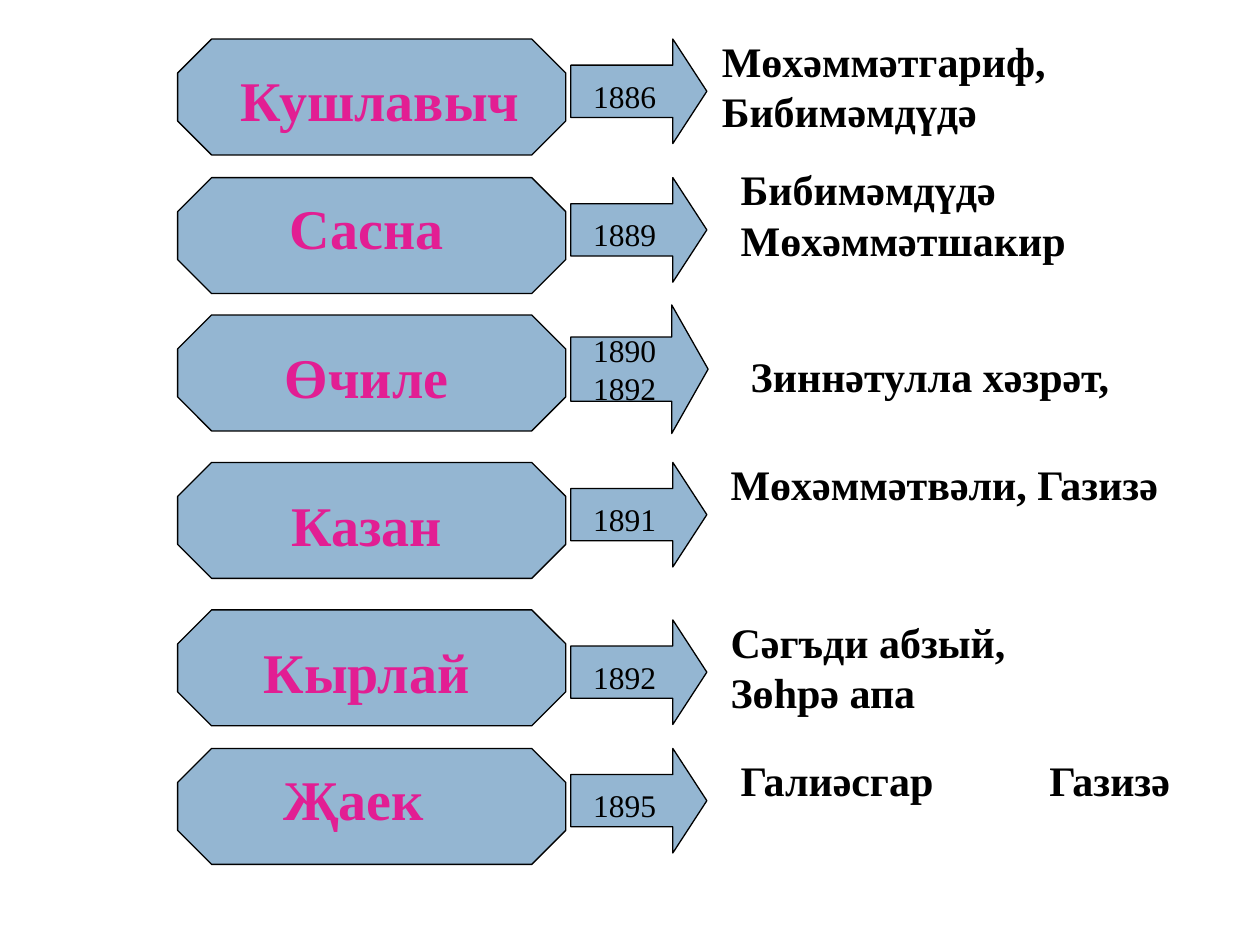
from dataclasses import dataclass

from lxml import etree
from pptx import Presentation
from pptx.dml.color import RGBColor
from pptx.enum import shapes, text
from pptx.oxml import ns
from pptx.util import Inches, Pt


@dataclass(frozen=True)
class Theme:
    font: str = "Times New Roman"
    fill: RGBColor = RGBColor(0x94, 0xB6, 0xD2)
    ink: RGBColor = RGBColor(0, 0, 0)
    accent: RGBColor = RGBColor(0xE2, 0x1E, 0x93)
    place_size: int = 32
    people_size: int = 24
    year_size: int = 18
    line_width: float = 0.75


theme = Theme()


def add_outline(parent, kind, box, adjustments):
    sp = parent.add_shape(kind, *map(Inches, box))
    for i, value in enumerate(adjustments):
        sp.adjustments[i] = value
    sp.shadow.inherit = False
    sp.fill.solid()
    sp.fill.fore_color.rgb = theme.fill
    sp.line.color.rgb = theme.ink
    sp.line.width = Pt(theme.line_width)


def add_label(parent, words, box, size, color=theme.ink, bold=True,
              align=text.PP_ALIGN.LEFT, tab=None):
    """Add a text box; tab is an optional tab stop in inches."""
    tf = parent.add_textbox(*map(Inches, box)).text_frame
    tf.word_wrap = True
    p = tf.paragraphs[0]
    p.text = words
    p.alignment = align
    if tab:
        tabs = etree.SubElement(p._p.get_or_add_pPr(), ns.qn("a:tabLst"))
        etree.SubElement(tabs, ns.qn("a:tab"), pos=str(Inches(tab)), algn="l")
    p.font.size = Pt(size)
    for r in p.runs:
        r.font.name = theme.font
        r.font.size = Pt(size)
        r.font.bold = bold
        r.font.color.rgb = color


prs = Presentation()
prs.slide_width, prs.slide_height = Inches(10), Inches(7.5)
s = prs.slides.add_slide(prs.slide_layouts[6])

# place, octagon top, label (left, top, width)
places = [
    ("Кушлавыч", 0.31, (1.64, 0.47, 2.75)),
    ("Сасна", 1.41, (1.66, 1.49, 2.5)),
    ("Өчиле", 2.5, (1.66, 2.67, 2.5)),
    ("Казан", 3.67, (1.66, 3.84, 2.5)),
    ("Кырлай", 4.84, (1.66, 5.01, 2.5)),
    ("Җаек", 5.94, (1.56, 6.02, 2.5)),
]
for place, top, label in places:
    group = s.shapes.add_group_shape().shapes
    add_outline(group, shapes.MSO_SHAPE.OCTAGON, (1.41, top, 3.08, 0.92), [0.293])
    add_label(group, place, (*label, 0.63), theme.place_size, theme.accent,
              align=text.PP_ALIGN.CENTER)

# names, text box (left, top, width, height), tab stop
people = [
    ("Мөхәммәтгариф, Бибимәмдүдә", (5.63, 0.23, 3.92, 0.9), None),
    ("Бибимәмдүдә\vМөхәммәтшакир", (5.78, 1.25, 3.75, 0.9), None),
    ("Зиннәтулла хәзрәт,", (5.86, 2.73, 3.92, 0.5), None),
    ("Мөхәммәтвәли, Газизә", (5.7, 3.59, 3.92, 0.9), None),
    ("Сәгъди абзый,\vЗөһрә апа", (5.7, 4.84, 3.92, 0.9), None),
    ("Галиәсгар\tГазизә", (5.78, 5.94, 3.92, 0.9), 2.45),
]
for names, box, tab in people:
    add_label(s.shapes, names, box, theme.people_size, tab=tab)

# year, arrow (top, width, height), arrowhead length, label (top, height)
years = [
    ("1886", (0.31, 1.08, 0.83), 0.325, (0.56, 0.43)),
    ("1889", (1.41, 1.08, 0.83), 0.325, (1.66, 0.43)),
    ("1890\v1892", (2.42, 1.09, 1.02), 0.283, (2.58, 0.71)),
    ("1891", (3.67, 1.08, 0.83), 0.325, (3.92, 0.43)),
    ("1892", (4.92, 1.08, 0.83), 0.325, (5.17, 0.43)),
    ("1895", (5.94, 1.08, 0.83), 0.325, (6.19, 0.43)),
]
for year, arrow, head, (top, height) in years:
    group = s.shapes.add_group_shape().shapes
    add_outline(group, shapes.MSO_SHAPE.RIGHT_ARROW, (4.53, *arrow), [0.5, head])
    add_label(group, year, (4.61, top, 0.83, height), theme.year_size, bold=False)

prs.save("out.pptx")
